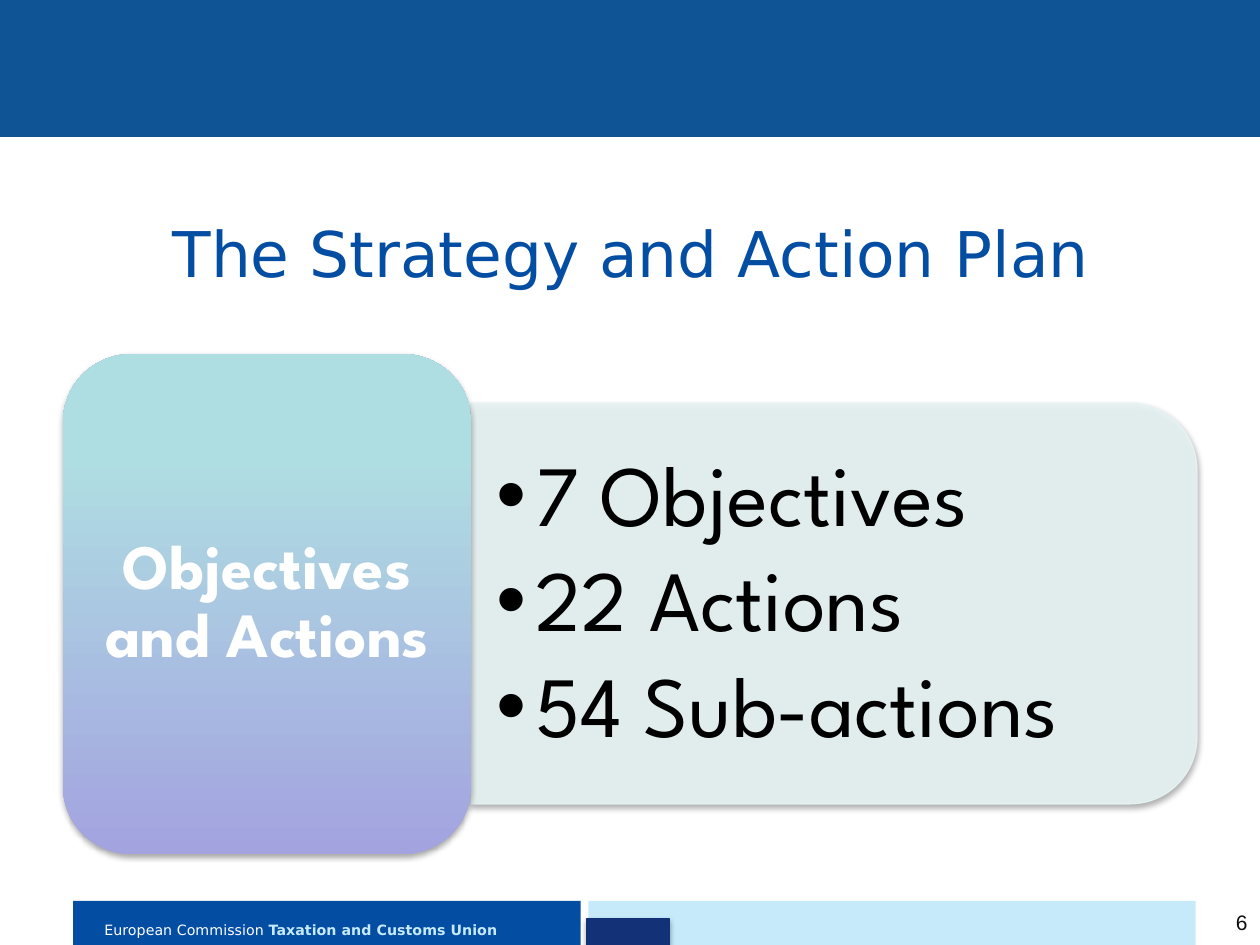
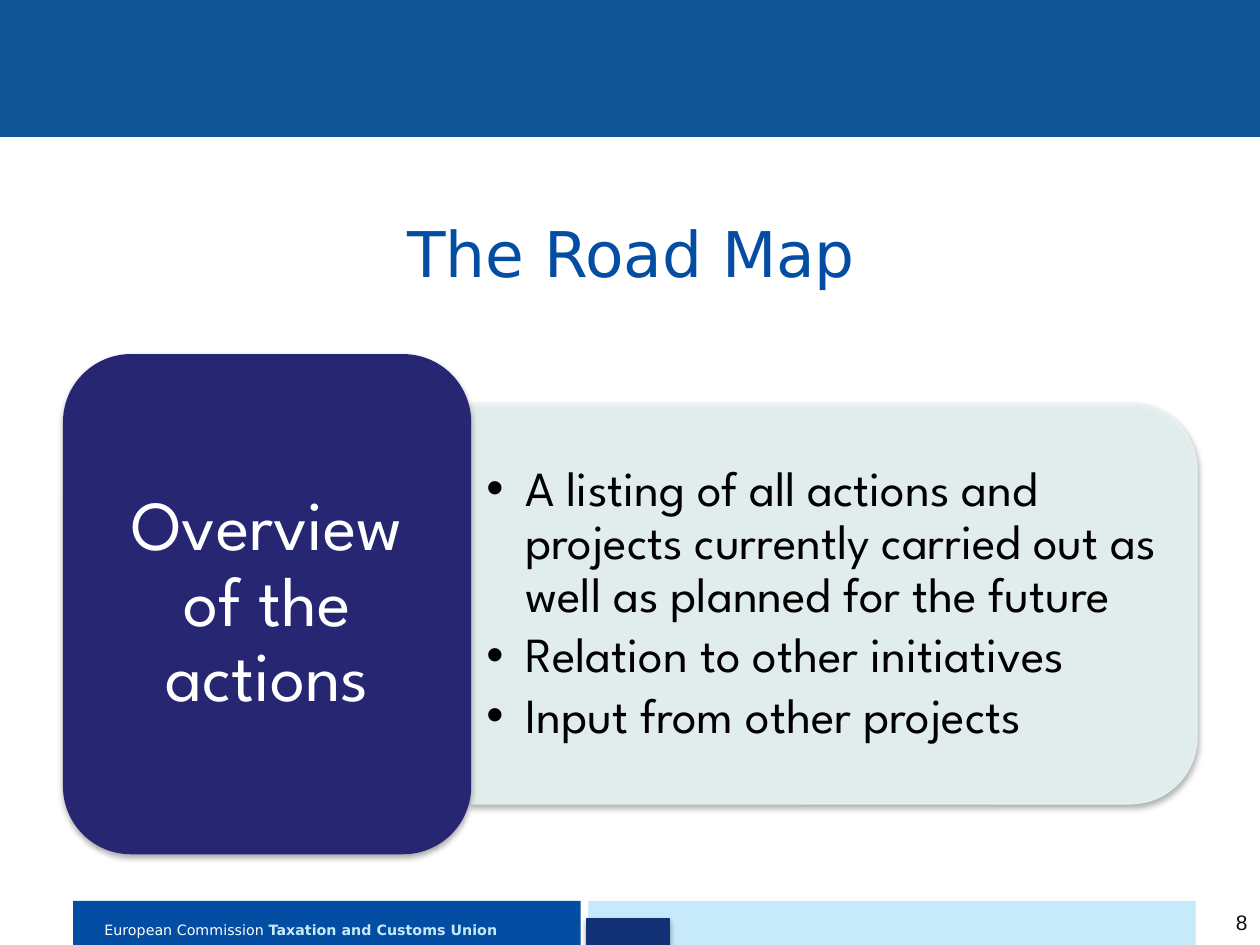
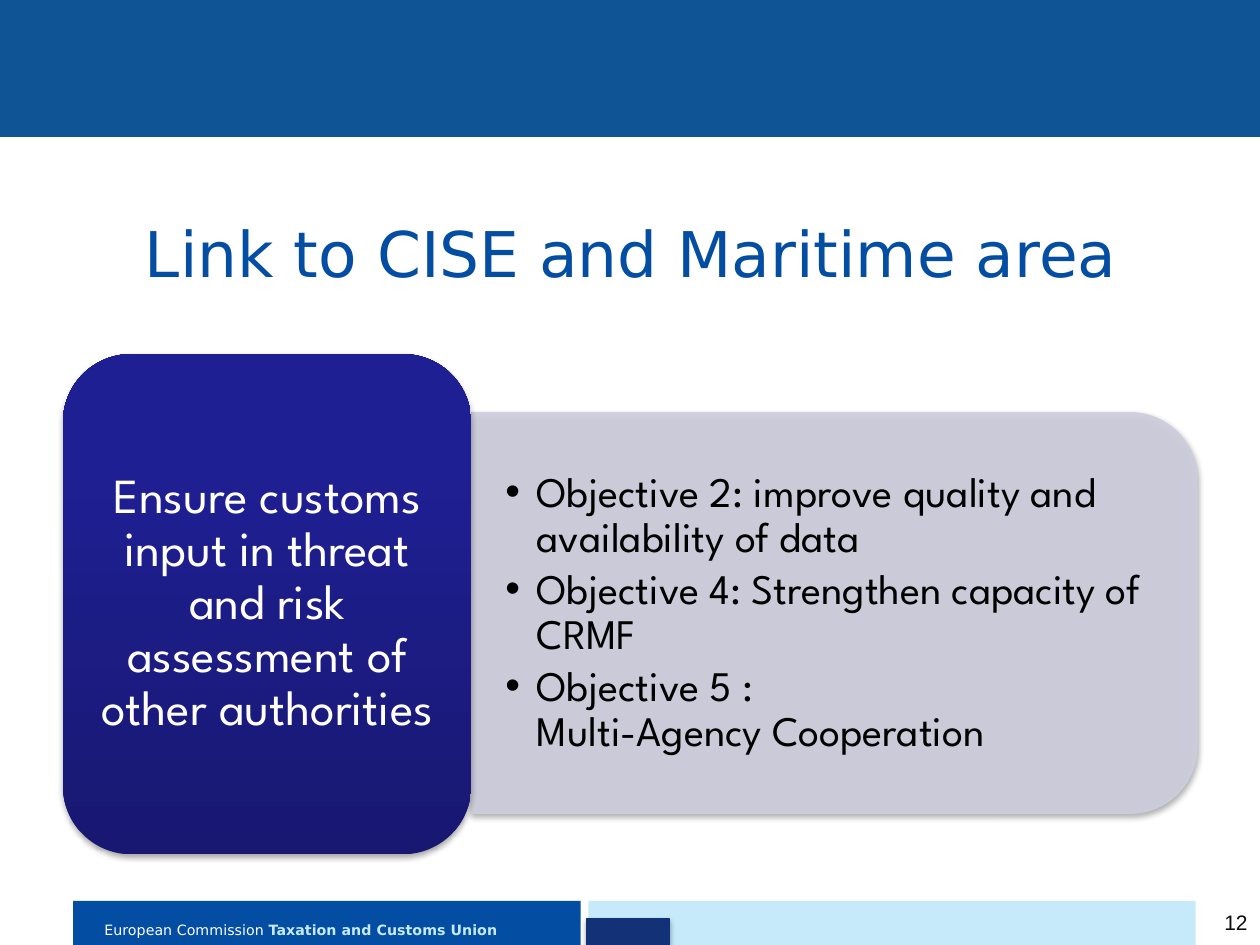
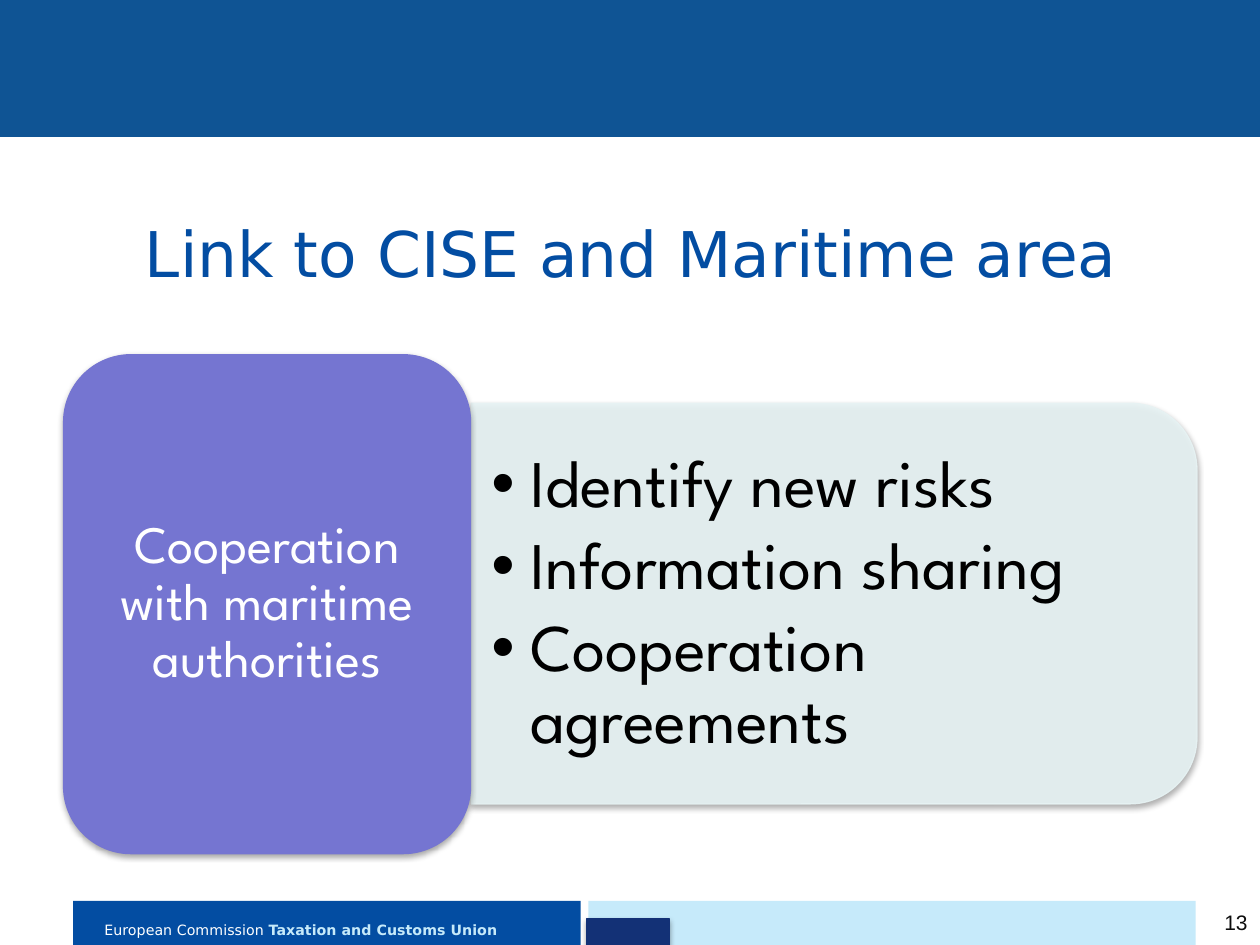
"""Build four strategy slides, each with a key card beside a panel of bullets."""
import lxml.etree
import pptx
import pptx.dml.color
import pptx.enum.shapes
import pptx.enum.text
import pptx.oxml.ns
import pptx.util

SHAPE = pptx.enum.shapes.MSO_SHAPE
ALIGN = pptx.enum.text.PP_ALIGN
ANCHOR = pptx.enum.text.MSO_ANCHOR
qn = pptx.oxml.ns.qn
element = lxml.etree.SubElement

COLOURS = {
    "band": "0F5494", "blue": "034DA2", "sky": "C6EAFA", "navy": "133176",
    "white": "FFFFFF", "black": "000000", "number": "0D0D0D",
    "mint": "E7F3F4", "lavender": "CECEDE", "indigo": "262673", "violet": "7575D1",
}
BODY_FONT, TITLE_FONT, NUMBER_FONT = "League Spartan", "DejaVu Sans", "Arial"

SLIDES = [
    {"number": "6", "title": "The Strategy and Action Plan",
     "card": "Objectives and Actions", "card_size": 36, "card_margin": 0.15, "bold": True,
     "gradient": [(0, "A3A3E0"), (80, "AFDEE2"), (100, "AFE0E4")],
     "panel": "mint", "drop": 0, "size": 49, "margin": 0.2, "indent": 0.31,
     "bullets": ["7 Objectives", "22 Actions", "54 Sub-actions"]},
    {"number": "8", "title": "The Road Map",
     "card": "Overview of the actions", "card_size": 40, "card_margin": 0.17, "bold": False,
     "fill": "indigo",
     "panel": "mint", "drop": 0, "size": 28, "margin": 0.12, "indent": 0.31,
     "bullets": ["A listing of all actions and projects currently carried out "
                 "as well as planned for the future",
                 "Relation to other initiatives", "Input from other projects"]},
    {"number": "12", "title": "Link to CISE and Maritime area",
     "card": "Ensure customs input in threat and risk assessment of other authorities",
     "card_size": 28, "card_margin": 0.12, "bold": False,
     "gradient": [(0, "181872"), (80, "1F1F94"), (100, "1D1D97")],
     "panel": "lavender", "drop": 1, "size": 24, "margin": 0.27, "indent": 0.25,
     "bullets": ["Objective 2: improve quality and availability of data",
                 "Objective 4: Strengthen capacity of CRMF",
                 "Objective 5 :\nMulti-Agency Cooperation"]},
    {"number": "13", "title": "Link to CISE and Maritime area",
     "card": "Cooperation with maritime authorities",
     "card_size": 30, "card_margin": 0.12, "bold": False,
     "fill": "violet",
     "panel": "mint", "drop": 0, "size": 38, "margin": 0.16, "indent": 0.31,
     "bullets": ["Identify new risks", "Information sharing", "Cooperation agreements"]},
]

presentation = pptx.Presentation()
presentation.slide_width = pptx.util.Inches(10)
presentation.slide_height = pptx.util.Inches(7.5)
COLUMN = presentation.slide_width / 100
ROW = presentation.slide_height / 100


def add_block(shapes, kind, cell, colour, outlined=False, shadowed=False, opacity=100):
    """Add a filled shape at a grid cell given as left, top, width, height."""
    left, top, width, height = cell
    shape = shapes.add_shape(kind, int(left * COLUMN), int(top * ROW),
                             int(width * COLUMN), int(height * ROW))
    rgb = pptx.dml.color.RGBColor.from_string(COLOURS[colour])
    shape.fill.solid()
    shape.fill.fore_color.rgb = rgb
    if outlined:
        shape.line.color.rgb = rgb
        shape.line.width = pptx.util.Pt(0.75)
    else:
        shape.line.fill.background()
    if opacity < 100:
        for tint in shape.element.spPr.iter(qn("a:srgbClr")):
            element(tint, qn("a:alpha"), val=str(opacity * 1000))
    shape.shadow.inherit = False
    if shadowed:
        effects = shape.element.spPr.find(qn("a:effectLst"))
        shadow = element(effects, qn("a:outerShdw"), blurRad="40000", dist="23000",
                         dir="5400000", rotWithShape="0")
        tint = element(shadow, qn("a:srgbClr"), val=COLOURS["black"])
        element(tint, qn("a:alpha"), val="35000")
    return shape


def add_run(paragraph, text, font, size, colour, bold=False):
    """Add one formatted run to a paragraph."""
    run = paragraph.add_run()
    run.text = text
    run.font.name = font
    run.font.size = pptx.util.Pt(size)
    run.font.bold = bold
    run.font.color.rgb = pptx.dml.color.RGBColor.from_string(COLOURS[colour])
    return run


layout = presentation.slide_layouts[1]
slides = [presentation.slides.add_slide(layout) for content in SLIDES]

shapes = slides[0].shapes
footer = shapes.add_textbox(int(7.3 * COLUMN), int(96.53 * ROW),
                            int(38.5 * COLUMN), int(3.47 * ROW))
footer.text_frame.word_wrap = True
for text, colour, bold in [("European Commission ", "white", False),
                           ("Taxation and Customs Union", "sky", True)]:
    run = add_run(footer.text_frame.paragraphs[0], text, TITLE_FONT, 14, colour, bold)
    run.font.element.set("baseline", "30000") if hasattr(run.font, "element") else \
        run.text and run._r.get_or_add_rPr().set("baseline", "30000")
shared = [
    add_block(shapes, SHAPE.RECTANGLE, (46.7, 95.33, 48.2, 4.67), "sky"),
    add_block(shapes, SHAPE.RECTANGLE, (5.8, 95.33, 40.3, 4.67), "blue"),
    footer,
    add_block(shapes, SHAPE.RECTANGLE, (0, 0, 100, 14.4), "band", outlined=True),
    add_block(shapes, SHAPE.RECTANGLE, (46.6, 97.2, 6.5, 2.8), "navy",
              outlined=True, shadowed=True),
]
for shape in shared:
    layout.shapes.element.append(shape.element)

for slide, content in zip(slides, SLIDES):
    number = slide.shapes.add_textbox(int(95.8 * COLUMN), int(95.6 * ROW),
                                      int(4.2 * COLUMN), int(4.4 * ROW))
    number.text_frame.word_wrap = True
    paragraph = number.text_frame.paragraphs[0]
    paragraph.alignment = ALIGN.RIGHT
    add_run(paragraph, content["number"], NUMBER_FONT, 12, "number")

    title = slide.shapes.title
    title.left, title.top = int(5.1 * COLUMN), int(22.67 * ROW)
    title.width, title.height = int(90 * COLUMN), int(13.6 * ROW)
    frame = title.text_frame
    frame.auto_size = pptx.enum.text.MSO_AUTO_SIZE.NONE
    frame.vertical_anchor = ANCHOR.TOP
    frame.margin_left = frame.margin_right = frame.margin_top = frame.margin_bottom = 0
    frame.paragraphs[0].alignment = ALIGN.CENTER
    add_run(frame.paragraphs[0], content["title"], TITLE_FONT, 36, "blue")

    panel = add_block(slide.shapes, SHAPE.ROUND_2_SAME_RECTANGLE,
                      (37.4, 42.67 + content["drop"], 57.6, 42.4), content["panel"],
                      outlined=True, shadowed=True, opacity=90)
    turn = (panel.width - panel.height) // 2
    panel.left, panel.top = panel.left + turn, panel.top - turn
    panel.width, panel.height = panel.height, panel.width
    panel.rotation = 90

    body = slide.placeholders[1]
    panel.element.addnext(body.element)
    body.left, body.top = int(37.4 * COLUMN), int((44.8 + content["drop"]) * ROW)
    body.width, body.height = int(56 * COLUMN), int(38.27 * ROW)

    card = add_block(slide.shapes, SHAPE.ROUNDED_RECTANGLE, (5, 37.47, 32.4, 52.93),
                     content.get("fill", "indigo"), shadowed=True)
    if "gradient" in content:
        card.fill.gradient()
        card.fill.gradient_angle = 90
        stops = card.element.spPr.find(".//" + qn("a:gsLst"))
        for stop in list(stops):
            stops.remove(stop)
        for position, colour in content["gradient"]:
            stop = element(stops, qn("a:gs"), pos=str(position * 1000))
            element(stop, qn("a:srgbClr"), val=colour)

    label = slide.shapes.add_textbox(int(6.6 * COLUMN), int(39.47 * ROW),
                                     int(29.2 * COLUMN), int(48.8 * ROW))
    for box, margin in [(body, content["margin"]), (label, content["card_margin"])]:
        frame = box.text_frame
        frame.word_wrap = True
        frame.auto_size = pptx.enum.text.MSO_AUTO_SIZE.NONE
        frame.vertical_anchor = ANCHOR.MIDDLE
        frame.margin_left = frame.margin_right = pptx.util.Inches(margin)
        frame.margin_top = frame.margin_bottom = pptx.util.Inches(margin / 2)

    paragraph = label.text_frame.paragraphs[0]
    paragraph.alignment = ALIGN.CENTER
    paragraph.line_spacing = 0.9
    add_run(paragraph, content["card"], BODY_FONT, content["card_size"], "white",
            content["bold"])

    for index, bullet in enumerate(content["bullets"]):
        frame = body.text_frame
        paragraph = frame.add_paragraph() if index else frame.paragraphs[0]
        paragraph.level = 1
        paragraph.line_spacing = 0.9
        paragraph.space_before = pptx.util.Pt(0)
        paragraph.space_after = pptx.util.Pt(round(0.15 * content["size"], 1))
        properties = paragraph._p.get_or_add_pPr()
        indent = pptx.util.Inches(content["indent"])
        properties.set("marL", str(indent))
        properties.set("indent", str(-indent))
        element(properties, qn("a:buChar"), char="•")
        for line_number, line in enumerate(bullet.split("\n")):
            if line_number:
                paragraph.add_line_break()
            add_run(paragraph, line, BODY_FONT, content["size"], "black")

presentation.save("out.pptx")
